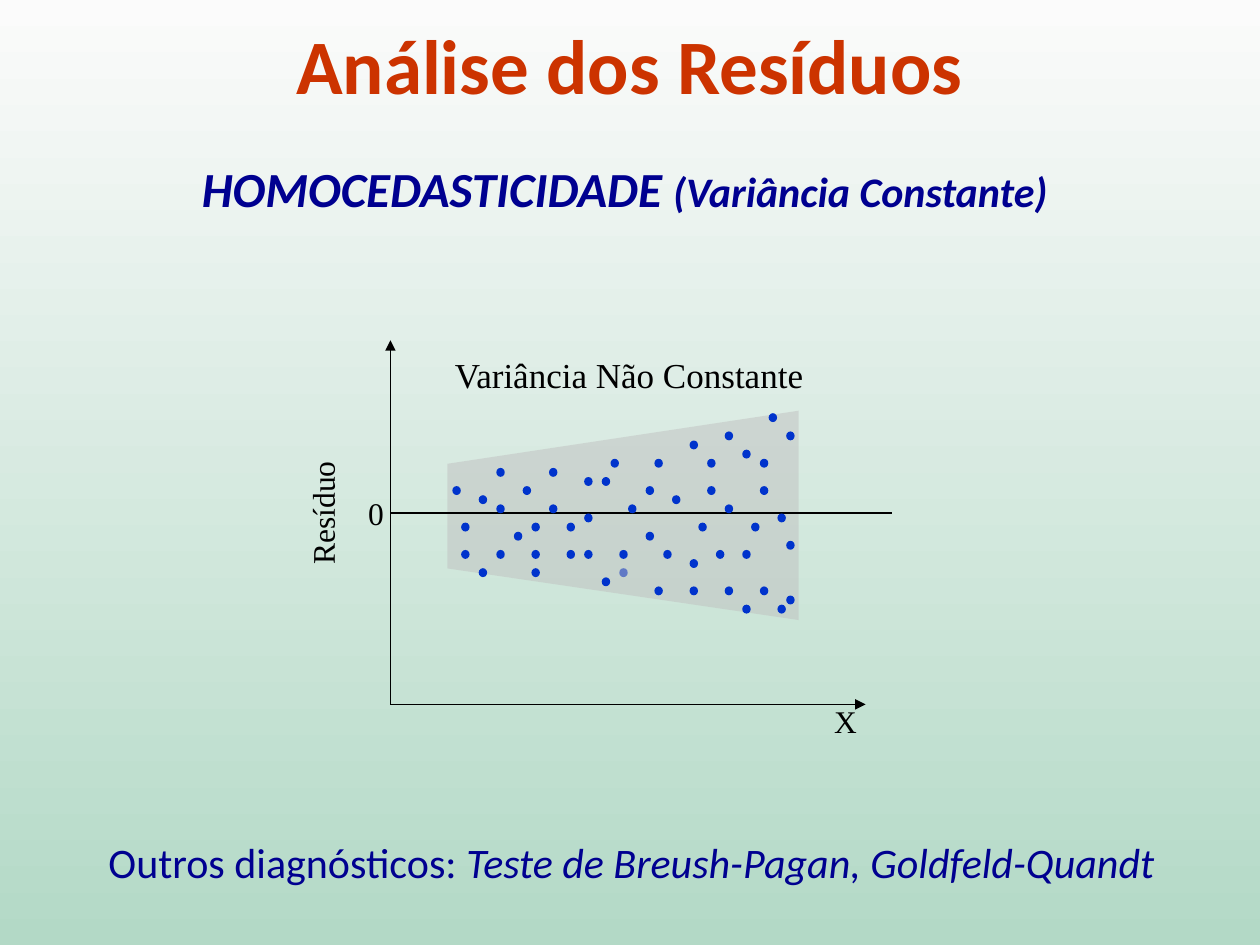
import pptx
import pptx.util
import pptx.dml.color
import pptx.enum.shapes
import pptx.enum.text
import pptx.oxml
import pptx.oxml.ns
from pptx.util import Cm

COLORS = {
    "sky": "FBFBFB",
    "meadow": "B3D9C6",
    "title": "CC3300",
    "navy": "000090",
    "dot": "0033CC",
    "cone": "C0C0C0",
    "ink": "000000",
}
SANS = "Calibri"
SERIF = "Times New Roman"

DOT_LEFT, DOT_TOP = 9.12, 8.33
COLUMN_STEP = 6.73 / 38
ROW_STEP = 3.86 / 21
DOT_BEHIND_CONE = (19, 17)
DOT_ROWS = {
    0: [36],
    2: [31, 38],
    3: [27],
    4: [33],
    5: [18, 23, 29, 35],
    6: [5, 11],
    7: [15, 17],
    8: [0, 8, 22, 29, 35],
    9: [3, 25],
    10: [5, 11, 20, 31],
    11: [15, 37],
    12: [1, 9, 13, 28, 34],
    13: [7, 22],
    14: [38],
    15: [1, 5, 9, 13, 15, 19, 24, 30, 33],
    16: [27],
    17: [3, 9],
    18: [17],
    19: [23, 27, 31, 35],
    20: [38],
    21: [33, 37],
}
CONE_CORNERS = [(16.1, 8.28), (9.02, 9.35), (9.02, 11.46), (16.1, 12.5)]
ORIGIN_X, ORIGIN_Y = 7.87, 14.2


def rgb(name):
    return pptx.dml.color.RGBColor.from_string(COLORS[name])


def append_xml(parent, tag, attributes=""):
    namespace = pptx.oxml.ns.nsdecls("a")
    parent.append(pptx.oxml.parse_xml(f"<a:{tag} {namespace} {attributes}/>"))


def paint_background(slide):
    fill = slide.background.fill
    fill.gradient()
    fill.gradient_angle = 90
    for stop, name in zip(fill.gradient_stops, ("meadow", "sky")):
        stop.color.rgb = rgb(name)


def add_text(shapes, box, runs, color, font, wrap=True, rotation=0, spacing=None):
    label = shapes.add_textbox(*map(Cm, box))
    label.rotation = rotation
    label.text_frame.word_wrap = wrap
    line = label.text_frame.paragraphs[0]
    line.alignment = pptx.enum.text.PP_ALIGN.CENTER
    line.line_spacing = spacing
    for words, size, bold, italic in runs:
        run = line.add_run()
        run.text = words
        run.font.name = font
        run.font.size = pptx.util.Pt(size)
        run.font.bold = bold
        run.font.italic = italic
        run.font.color.rgb = rgb(color)


def fill_plain(shape, color):
    shape.shadow.inherit = False
    shape.fill.solid()
    shape.fill.fore_color.rgb = rgb(color)
    shape.line.fill.background()


def add_dot(shapes, column, row):
    dot = shapes.add_shape(
        pptx.enum.shapes.MSO_SHAPE.FLOWCHART_CONNECTOR,
        Cm(DOT_LEFT + column * COLUMN_STEP),
        Cm(DOT_TOP + row * ROW_STEP),
        Cm(0.17),
        Cm(0.18),
    )
    fill_plain(dot, "dot")


def add_cone(shapes):
    corners = [(Cm(x), Cm(y)) for x, y in CONE_CORNERS]
    builder = shapes.build_freeform(*corners[0])
    builder.add_line_segments(corners[1:], close=True)
    cone = builder.convert_to_shape()
    fill_plain(cone, "cone")
    tint = cone.fill._xPr.find(".//" + pptx.oxml.ns.qn("a:srgbClr"))
    append_xml(tint, "alpha", 'val="50000"')


def add_axis(shapes, start, end, arrow=True):
    axis = shapes.add_connector(
        pptx.enum.shapes.MSO_CONNECTOR.STRAIGHT, *map(Cm, start + end)
    )
    axis.line.color.rgb = rgb("ink")
    axis.line.width = pptx.util.Pt(0.75)
    if arrow:
        append_xml(axis.line._get_or_add_ln(), "tailEnd", 'type="triangle"')
    append_xml(axis._element.spPr, "effectLst")


def add_residual_plot(slide):
    plot = slide.shapes.add_group_shape().shapes
    add_dot(plot, *DOT_BEHIND_CONE)
    add_cone(plot)
    add_axis(plot, (ORIGIN_X, 10.34), (17.98, 10.34), arrow=False)
    add_axis(plot, (ORIGIN_X, ORIGIN_Y), (ORIGIN_X, 6.86))
    add_axis(plot, (ORIGIN_X, ORIGIN_Y), (17.45, ORIGIN_Y))
    for row, columns in DOT_ROWS.items():
        for column in columns:
            add_dot(plot, column, row)
    for words, size, box, rotation in [
        ("0", 18, (7.16, 9.83, 0.84, 1.02), 0),
        ("X", 18, (16.56, 14.02, 0.97, 1.02), 0),
        ("Variância Não Constante", 20, (8.89, 7.01, 7.59, 1.09), 0),
        ("Resíduo", 18, (4.9, 9.83, 3.2, 1.02), 270),
    ]:
        add_text(plot, box, [(words, size, False, False)], "ink", SERIF,
                 wrap=bool(rotation), rotation=rotation)


def main():
    deck = pptx.Presentation()
    deck.slide_width, deck.slide_height = Cm(25.4), Cm(19.05)
    slide = deck.slides.add_slide(deck.slide_layouts[6])
    paint_background(slide)
    add_text(slide.shapes, (0.76, 2.84, 23.67, 1.65), [
        ("HOMOCEDASTICIDADE ", 28, True, True),
        ("(Variância Constante)", 24, True, True),
    ], "navy", SANS, spacing=1.2)
    add_text(slide.shapes, (0, 0.23, 25.4, 2.13),
             [("Análise dos Resíduos", 44, True, False)], "title", SANS)
    add_text(slide.shapes, (1.02, 16.74, 23.42, 2.2), [
        ("Outros diagnósticos: ", 24, False, False),
        ("Teste de Breush-Pagan, Goldfeld-Quandt", 24, False, True),
    ], "navy", SANS)
    add_residual_plot(slide)
    deck.save("out.pptx")


if __name__ == "__main__":
    main()
